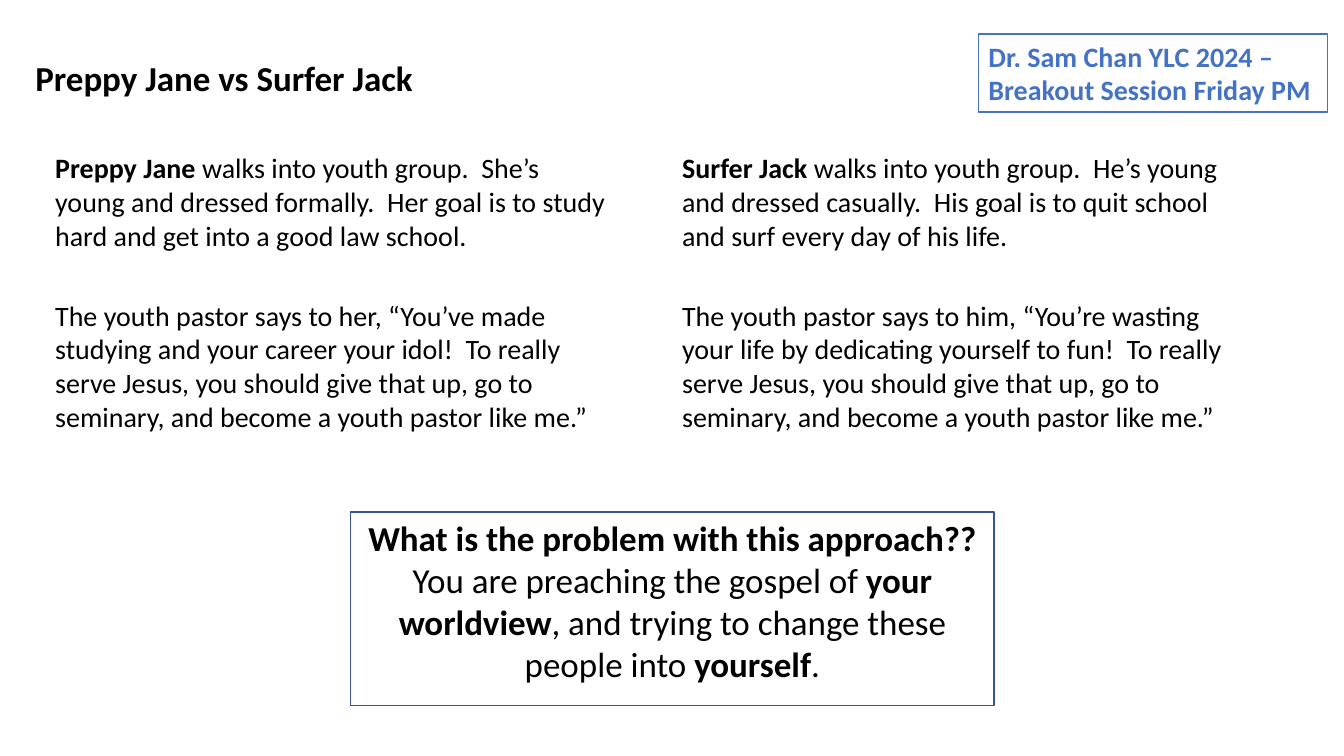
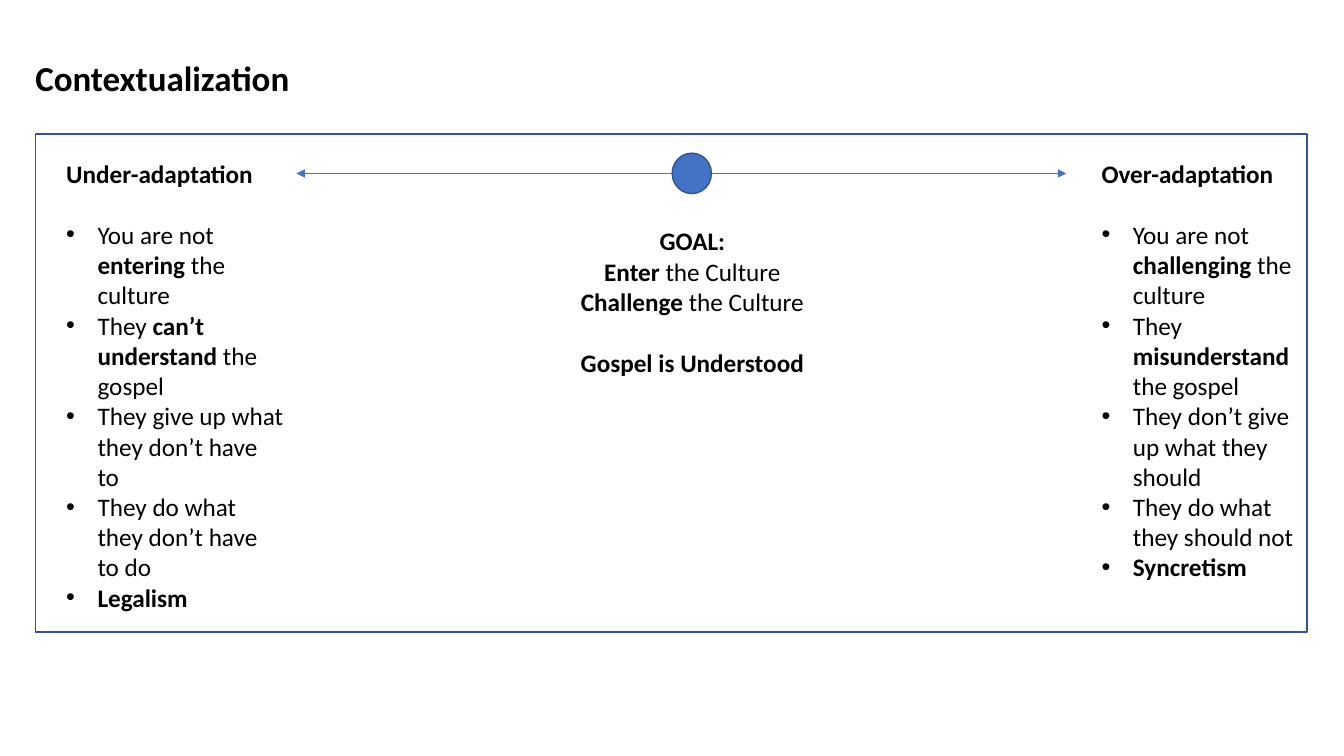
from dataclasses import dataclass

from lxml.etree import SubElement
from pptx import Presentation
from pptx.dml.color import RGBColor
from pptx.enum.shapes import MSO_CONNECTOR, MSO_SHAPE
from pptx.enum.text import MSO_ANCHOR, MSO_AUTO_SIZE, PP_ALIGN
from pptx.oxml.ns import qn
from pptx.util import Cm, Pt


@dataclass(frozen=True)
class Theme:
    font: str = "Calibri"
    bullet_font: str = "Arial"
    ink: RGBColor = RGBColor(0x00, 0x00, 0x00)
    accent: RGBColor = RGBColor(0x44, 0x72, 0xC4)
    outline: RGBColor = RGBColor(0x32, 0x54, 0x91)
    title_size: int = 25
    body_size: int = 20
    detail_size: int = 18
    section_gap: int = 22
    outline_width: float = 1
    arrow_width: float = 0.5


@dataclass(frozen=True)
class Line:
    """One paragraph; words between ** marks are bold."""
    text: str
    bullet: bool = False
    new_section: bool = False


class Deck:
    def __init__(self, theme):
        self.theme = theme
        self.presentation = Presentation()
        self.presentation.slide_width = Cm(33.87)
        self.presentation.slide_height = Cm(19.05)
        self.slide = None

    def add_slide(self, title):
        blank_layout = self.presentation.slide_layouts[6]
        self.slide = self.presentation.slides.add_slide(blank_layout)
        self.text((0.64, 1.3, 11.18, 1.32), [Line(f"**{title}**")], self.theme.title_size)

    def text(self, box, lines, size, align=PP_ALIGN.LEFT):
        shape = self.slide.shapes.add_textbox(*map(Cm, box))
        self.add_lines(shape, lines, size, self.theme.ink, align)

    def add_lines(self, shape, lines, size, color, align=PP_ALIGN.LEFT):
        frame = shape.text_frame
        frame.word_wrap = True
        frame.auto_size = MSO_AUTO_SIZE.SHAPE_TO_FIT_TEXT
        for index, line in enumerate(lines):
            paragraph = frame.add_paragraph() if index else frame.paragraphs[0]
            paragraph.alignment = align
            if line.new_section:
                paragraph.space_before = Pt(self.theme.section_gap)
            if line.bullet:
                self.add_bullet(paragraph)
            for part, words in enumerate(line.text.split("**")):
                if words:
                    run = paragraph.add_run()
                    run.text = words
                    run.font.name = self.theme.font
                    run.font.size = Pt(size)
                    run.font.bold = part % 2 == 1
                    run.font.color.rgb = color

    def add_bullet(self, paragraph):
        indent = Cm(0.79)
        properties = paragraph._p.get_or_add_pPr()
        properties.set("marL", str(indent))
        properties.set("indent", str(-indent))
        SubElement(properties, qn("a:buFont"), typeface=self.theme.bullet_font)
        SubElement(properties, qn("a:buChar"), char="•")

    def shape(self, kind, box, outline, fill=None):
        shape = self.slide.shapes.add_shape(kind, *map(Cm, box))
        shape.shadow.inherit = False
        shape.line.color.rgb = outline
        shape.line.width = Pt(self.theme.outline_width)
        if fill is None:
            shape.fill.background()
        else:
            shape.fill.solid()
            shape.fill.fore_color.rgb = fill
        return shape

    def frame(self, box):
        self.shape(MSO_SHAPE.RECTANGLE, box, self.theme.outline)

    def dot(self, box):
        self.shape(MSO_SHAPE.OVAL, box, self.theme.outline, self.theme.accent)

    def badge(self, box, text):
        shape = self.shape(MSO_SHAPE.RECTANGLE, box, self.theme.accent)
        shape.text_frame.vertical_anchor = MSO_ANCHOR.MIDDLE
        self.add_lines(shape, [Line(f"**{text}**")], self.theme.body_size, self.theme.accent)

    def double_arrow(self, left, right, height):
        arrow = self.slide.shapes.add_connector(
            MSO_CONNECTOR.STRAIGHT, Cm(left), Cm(height), Cm(right), Cm(height))
        arrow.line.color.rgb = self.theme.accent
        arrow.line.width = Pt(self.theme.arrow_width)
        properties = arrow._element.spPr
        for end in ("a:headEnd", "a:tailEnd"):
            SubElement(properties.find(qn("a:ln")), qn(end), type="triangle")
        SubElement(properties, qn("a:effectLst"))


def add_story_slide(deck):
    theme = deck.theme
    deck.add_slide("Preppy Jane vs Surfer Jack")
    deck.badge((24.66, 0.86, 8.79, 1.96), "Dr. Sam Chan YLC 2024 – Breakout Session Friday PM")

    rows = [
        (3.68, 2.82, [
            "**Preppy Jane** walks into youth group.  She’s young and dressed formally.  "
            "Her goal is to study hard and get into a good law school.",
            "**Surfer Jack **walks into youth group.  He’s young and dressed casually.  "
            "His goal is to quit school and surf every day of his life.",
        ]),
        (7.39, 3.68, [
            "The youth pastor says to her, “You’ve made studying and your career your idol!  "
            "To really serve Jesus, you should give that up, go to seminary, "
            "and become a youth pastor like me.”",
            "The youth pastor says to him, “You’re wasting your life by dedicating yourself "
            "to fun!  To really serve Jesus, you should give that up, go to seminary, "
            "and become a youth pastor like me.”",
        ]),
    ]
    for top, height, stories in rows:
        for left, story in zip((1.14, 16.94), stories):
            deck.text((left, top, 14.48, height), [Line(story)], theme.body_size)

    left, top, width = 8.84, 12.9, 16.21
    deck.text((left, top, width, 4.52), [
        Line("**What is the problem with this approach??**"),
        Line("You are preaching the gospel of **your worldview**, "
             "and trying to change these people into **yourself**."),
    ], theme.title_size, PP_ALIGN.CENTER)
    deck.frame((left, top, width, 4.88))


def add_contextualization_slide(deck):
    theme = deck.theme
    deck.add_slide("Contextualization")
    deck.double_arrow(7.47, 26.87, 4.37)

    top = 3.86
    extremes = [
        ((1.42, top, 5.97, 11.79), "Under-adaptation", [
            "You are not **entering** the culture",
            "They **can’t understand **the gospel",
            "They give up what they don’t have to",
            "They do what they don’t have to do",
            "**Legalism**",
        ]),
        ((27.51, top, 5.44, 11.02), "Over-adaptation", [
            "You are not **challenging** the culture",
            "They **misunderstand** the gospel",
            "They don’t give up what they should",
            "They do what they should not",
            "**Syncretism**",
        ]),
    ]
    for box, heading, points in extremes:
        bullets = [Line(point, bullet=True, new_section=index == 0)
                   for index, point in enumerate(points)]
        deck.text(box, [Line(f"**{heading}**"), *bullets], theme.detail_size)

    deck.dot((16.94, top, 0.99, 1.02))
    deck.text((14.02, 5.56, 6.86, 4.11), [
        Line("**GOAL:**"),
        Line("**Enter** the Culture"),
        Line("**Challenge** the Culture"),
        Line("**Gospel is Understood**", new_section=True),
    ], theme.detail_size, PP_ALIGN.CENTER)
    deck.frame((0.89, 3.38, 32.05, 12.55))


def main():
    deck = Deck(Theme())
    add_story_slide(deck)
    add_contextualization_slide(deck)
    deck.presentation.save("out.pptx")


if __name__ == "__main__":
    main()
